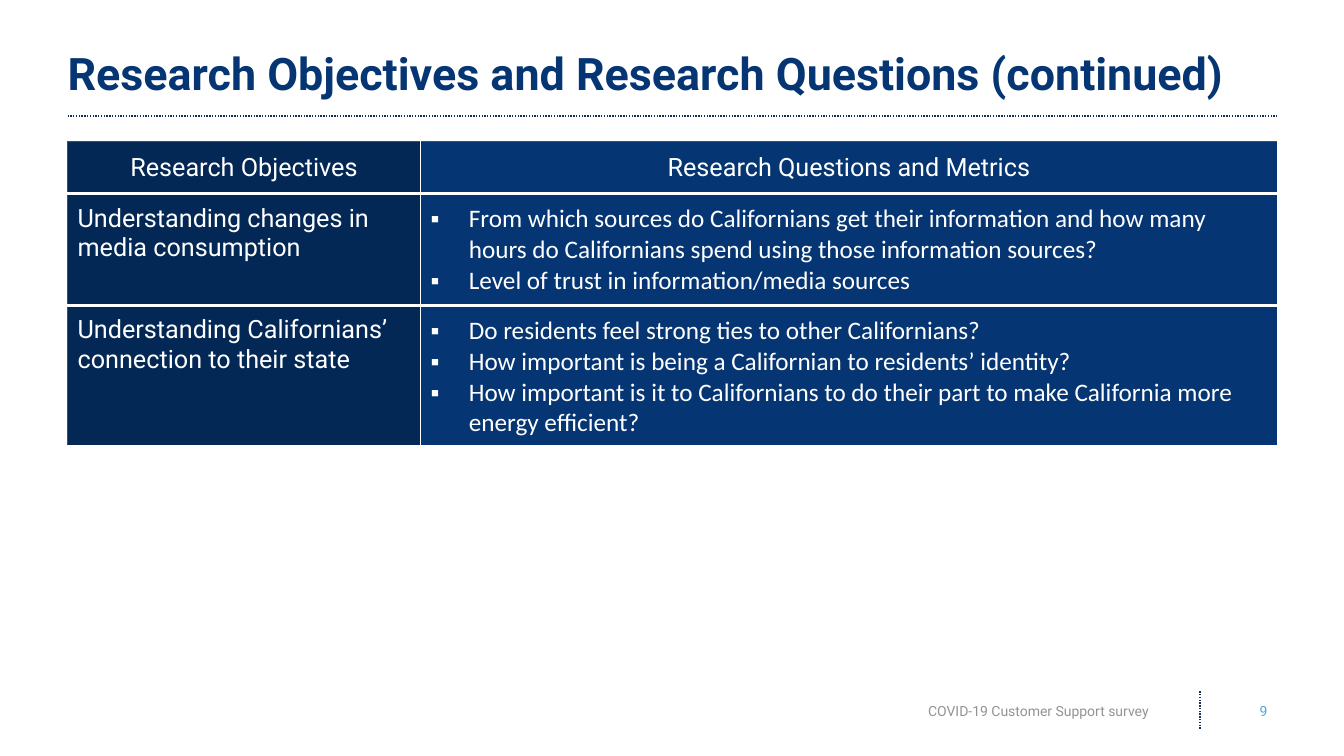
"""Build the research objectives slide with its two-column table."""
import pptx
import pptx.dml.color
import pptx.enum.dml
import pptx.enum.shapes
import pptx.enum.text
import pptx.oxml
import pptx.oxml.ns
import pptx.util
from lxml import etree

Inches = pptx.util.Inches
Pt = pptx.util.Pt
Align = pptx.enum.text.PP_ALIGN
Anchor = pptx.enum.text.MSO_ANCHOR

HEADERS = ["Research Objectives", "Research Questions and Metrics"]
OBJECTIVES = [
    ("Understanding changes in media consumption", [
        "From which sources do Californians get their information and how many "
        "hours do Californians spend using those information sources?",
        "Level of trust in information/media sources",
    ]),
    ("Understanding Californians’ connection to their state", [
        "Do residents feel strong ties to other Californians?",
        "How important is being a Californian to residents’ identity?",
        "How important is it to Californians to do their part to make "
        "California more energy efficient?",
    ]),
]


def color(value):
    return pptx.dml.color.RGBColor.from_string(value)


def add_element(parent, tag, **attributes):
    return etree.SubElement(parent, pptx.oxml.ns.qn(tag), attributes)


class SlideBuilder:
    navy, blue, white, edge, rule = "042856", "053572", "FFFFFF", "4D4D4F", "132F56"
    heading_font, body_font = "Roboto", "Calibri"
    margin, width = 0.67, 12

    def __init__(self, slide):
        self.slide = slide

    def style(self, paragraph, size, fill, font, bold=False):
        for span in paragraph.runs:
            span.font.size = Pt(size)
            span.font.name = font
            span.font.bold = bold
            span.font.color.rgb = color(fill)

    def line(self, x1, y1, x2, y2):
        line = self.slide.shapes.add_connector(
            pptx.enum.shapes.MSO_CONNECTOR.STRAIGHT,
            Inches(x1), Inches(y1), Inches(x2), Inches(y2))
        line.line.color.rgb = color(self.rule)
        line.line.width = Pt(1)
        line.line.dash_style = pptx.enum.dml.MSO_LINE.ROUND_DOT
        add_element(line.element.spPr, "a:effectLst")

    def text(self, words, left, top, width, height, size, fill, bold=False):
        box = self.slide.shapes.add_textbox(
            Inches(left), Inches(top), Inches(width), Inches(height))
        frame = box.text_frame
        frame.text = words
        frame.word_wrap = True
        frame.vertical_anchor = Anchor.MIDDLE
        self.style(frame.paragraphs[0], size, fill, self.heading_font, bold)
        return frame

    def title(self, words):
        frame = self.text(words, self.margin, 0.44, self.width, 0.63, 32, self.blue, True)
        frame.margin_left = frame.margin_top = frame.margin_bottom = 0
        frame.paragraphs[0].line_spacing = 0.9

    def footer(self, words, left, width, fill):
        frame = self.text(words, left, 6.88, width, 0.35, 10, fill)
        frame.paragraphs[0].alignment = Align.RIGHT

    def borders(self, cell, row, column):
        sides = [
            ("a:lnL", 1, self.white if column else self.edge),
            ("a:lnR", 1, self.white),
            ("a:lnT", 2.25 if row else 1, self.white if row else self.edge),
            ("a:lnB", 2.25, self.white),
        ]
        properties = cell._tc.get_or_add_tcPr()
        for tag, points, fill in sides:
            border = add_element(properties, tag, w=str(Pt(points)))
            add_element(add_element(border, "a:solidFill"), "a:srgbClr", val=fill)

    def bullet(self, paragraph):
        properties = paragraph._p.get_or_add_pPr()
        properties.set("marL", str(Inches(0.38)))
        properties.set("indent", str(Inches(-0.38)))
        add_element(properties, "a:buFont", typeface="Arial")
        add_element(properties, "a:buChar", char="▪")

    def cell(self, table, row, column, lines):
        cell = table.cell(row, column)
        self.borders(cell, row, column)
        cell.fill.solid()
        cell.fill.fore_color.rgb = color(self.blue if column else self.navy)
        cell.margin_left = cell.margin_right = Inches(0.1)
        cell.margin_top = cell.margin_bottom = Inches(0.1)
        is_objective = row > 0 and column == 0
        is_question = row > 0 and column == 1
        cell.vertical_anchor = Anchor.TOP if is_objective else Anchor.MIDDLE
        cell.text_frame.text = "\n".join(lines)
        for paragraph in cell.text_frame.paragraphs:
            if row == 0:
                paragraph.alignment = Align.CENTER
                paragraph.line_spacing = 1.07
            if is_question:
                self.bullet(paragraph)
            font = self.body_font if is_question else self.heading_font
            self.style(paragraph, 18, self.white, font)

    def table(self, headers, objectives, top, widths, heights):
        frame = self.slide.shapes.add_table(
            len(heights), len(widths), Inches(self.margin), Inches(top),
            Inches(sum(widths)), Inches(sum(heights)))
        table = frame.table
        table.first_row = table.horz_banding = False
        for column, width in zip(table.columns, widths):
            column.width = Inches(width)
        for row, height in zip(table.rows, heights):
            row.height = Inches(height)
        for column, header in enumerate(headers):
            self.cell(table, 0, column, [header])
        for row, (objective, questions) in enumerate(objectives, 1):
            self.cell(table, row, 0, [objective])
            self.cell(table, row, 1, questions)


def main():
    deck = pptx.Presentation()
    deck.slide_width, deck.slide_height = Inches(13.33), Inches(7.5)
    page = SlideBuilder(deck.slides.add_slide(deck.slide_layouts[6]))
    page.line(page.margin, 1.15, page.margin + page.width, 1.15)
    page.line(11.9, 7.23, 11.9, 6.86)
    page.title("Research Objectives and Research Questions (continued)")
    page.footer("COVID-19 Customer Support survey", 7.21, 4.28, "939396")
    page.footer("9", 12.06, 0.61, "51A5E3")
    page.table(HEADERS, OBJECTIVES, 1.4, [3.5, 8.5], [0.51, 1.11, 1.4])
    deck.save("out.pptx")


if __name__ == "__main__":
    main()
